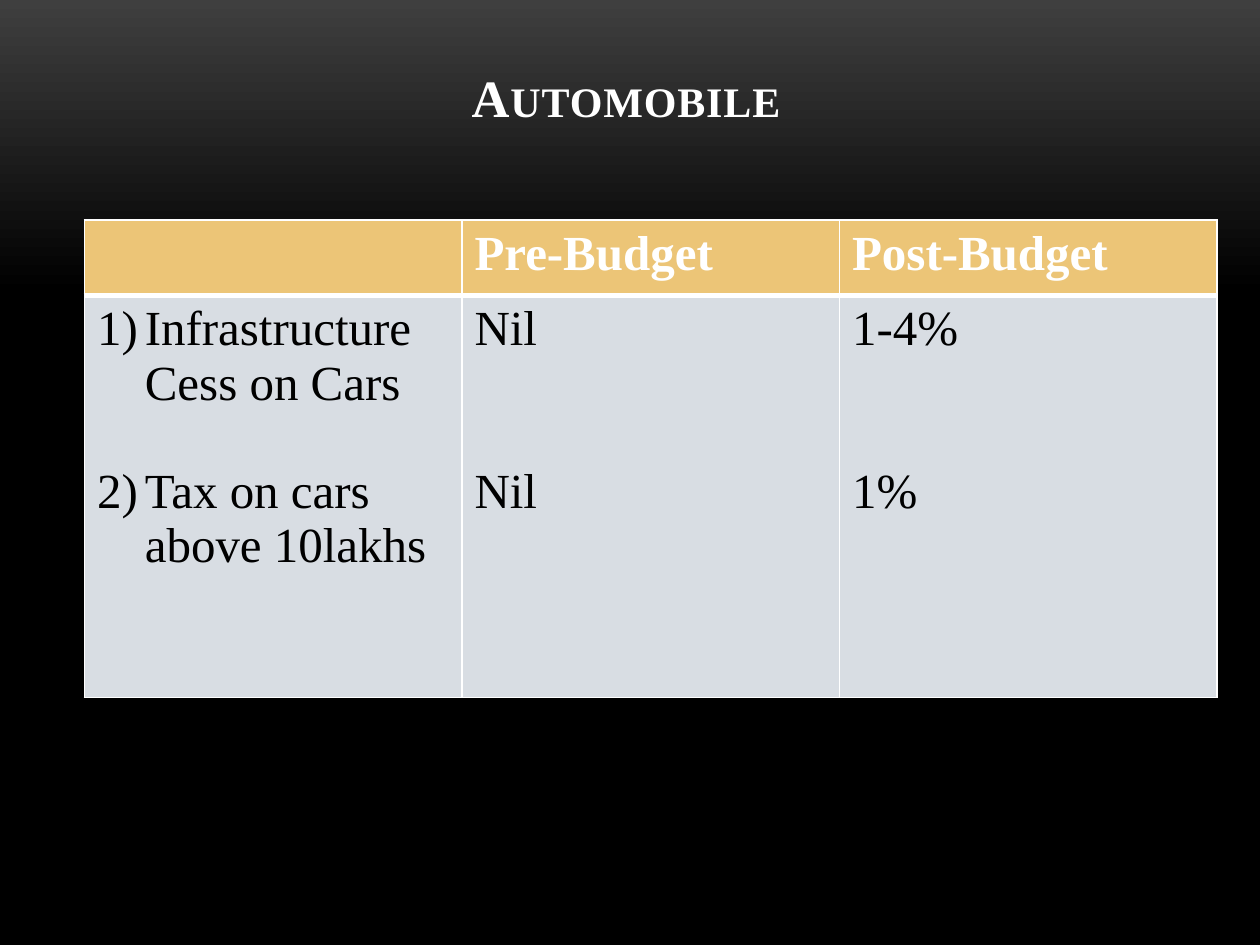
from dataclasses import dataclass

import pptx
import pptx.dml.color
import pptx.enum.text
import pptx.oxml
import pptx.oxml.ns
import pptx.util

COLORS = {"white": "FFFFFF", "black": "000000", "charcoal": "3F3F3F",
          "gold": "ECC577", "mist": "D8DDE3"}
FONT = "Times New Roman"
SLIDE_WIDTH, SLIDE_HEIGHT = pptx.util.Inches(10), pptx.util.Inches(7.5)
LINE_HEIGHT = 31  # points, one line of table text
NUMBER_INDENT = pptx.util.Inches(0.38)


@dataclass
class CellStyle:
    fill: str
    text: str
    bold: bool
    borders: dict[str, float]  # widths in points, in schema order


@dataclass
class TableCell:
    lines: list[str]
    gap_lines: int = 0
    numbered: bool = False


HEADER = CellStyle("gold", "white", True, {"L": 1, "R": 1, "T": 1, "B": 3})
BODY = CellStyle("mist", "black", False, {"L": 1, "R": 1, "T": 3, "B": 1})
ROWS = [
    (HEADER, 0.6, [TableCell([]), TableCell(["Pre-Budget"]), TableCell(["Post-Budget"])]),
    (BODY, 3.19, [
        TableCell(["Infrastructure Cess on Cars", "Tax on cars above 10lakhs"], 1, True),
        TableCell(["Nil", "Nil"], 2),
        TableCell(["1-4%", "1%"], 2),
    ]),
]


def rgb(name: str) -> pptx.dml.color.RGBColor:
    return pptx.dml.color.RGBColor.from_string(COLORS[name])


def format_font(font, size: float, color: str, bold: bool) -> None:
    font.name, font.size, font.bold = FONT, pptx.util.Pt(size), bold
    font.color.rgb = rgb(color)


def add_borders(cell, borders: dict[str, float]) -> None:
    properties = cell._tc.get_or_add_tcPr()
    for side, width in borders.items():
        properties.append(pptx.oxml.parse_xml(
            f'<a:ln{side} {pptx.oxml.ns.nsdecls("a")} w="{pptx.util.Pt(width)}">'
            f'<a:solidFill><a:srgbClr val="{COLORS["white"]}"/></a:solidFill></a:ln{side}>'))


def add_number(paragraph) -> None:
    properties = paragraph._p.get_or_add_pPr()
    properties.set("marL", str(NUMBER_INDENT))
    properties.set("indent", str(-NUMBER_INDENT))
    properties.append(pptx.oxml.parse_xml(
        f'<a:buAutoNum {pptx.oxml.ns.nsdecls("a")} type="arabicParenR"/>'))


def draw_cell(cell, content: TableCell, style: CellStyle) -> None:
    add_borders(cell, style.borders)
    cell.fill.solid()
    cell.fill.fore_color.rgb = rgb(style.fill)
    cell.text_frame.text = "\n".join(content.lines)
    for index, paragraph in enumerate(cell.text_frame.paragraphs):
        if content.numbered:
            add_number(paragraph)
        if index:
            paragraph.space_before = pptx.util.Pt(content.gap_lines * LINE_HEIGHT)
        for run in paragraph.runs:
            format_font(run.font, 28, style.text, style.bold)


def draw_background(slide) -> None:
    fill = slide.background.fill
    fill.gradient()
    fill.gradient_angle = 270
    for stop, color, position in zip(fill.gradient_stops, ("charcoal", "black"), (0, 0.31)):
        stop.color.rgb = rgb(color)
        stop.position = position


def draw_title(slide, text: str) -> None:
    title = slide.shapes.title
    title.left, title.top = int(SLIDE_WIDTH * 0.067), int(SLIDE_HEIGHT * 0.04)
    title.width, title.height = int(SLIDE_WIDTH * 0.867), int(SLIDE_HEIGHT / 6)
    frame = title.text_frame
    frame.text = text
    frame.auto_size = pptx.enum.text.MSO_AUTO_SIZE.NONE
    frame.vertical_anchor = pptx.enum.text.MSO_ANCHOR.BOTTOM
    frame.margin_bottom = pptx.util.Inches(0.53)
    paragraph = frame.paragraphs[0]
    paragraph.alignment = pptx.enum.text.PP_ALIGN.CENTER
    font = paragraph.runs[0].font
    format_font(font, 30, "white", True)
    font._element.set("cap", "small")
    font._element.set("spc", "50")


def draw_table(slide) -> None:
    height = pptx.util.Inches(sum(row_height for _, row_height, _ in ROWS))
    table = slide.shapes.add_table(
        len(ROWS), len(ROWS[0][2]), int(SLIDE_WIDTH * 0.067), int(SLIDE_HEIGHT * 0.233),
        int(SLIDE_WIDTH * 0.899), height).table
    table.horz_banding = False
    for row, (style, row_height, contents) in zip(table.rows, ROWS):
        row.height = pptx.util.Inches(row_height)
        for cell, content in zip(row.cells, contents):
            draw_cell(cell, content, style)


def main() -> None:
    presentation = pptx.Presentation()
    presentation.slide_width, presentation.slide_height = SLIDE_WIDTH, SLIDE_HEIGHT
    slide = presentation.slides.add_slide(presentation.slide_layouts[5])
    draw_background(slide)
    draw_title(slide, "Automobile")
    draw_table(slide)
    presentation.save("out.pptx")


if __name__ == "__main__":
    main()
